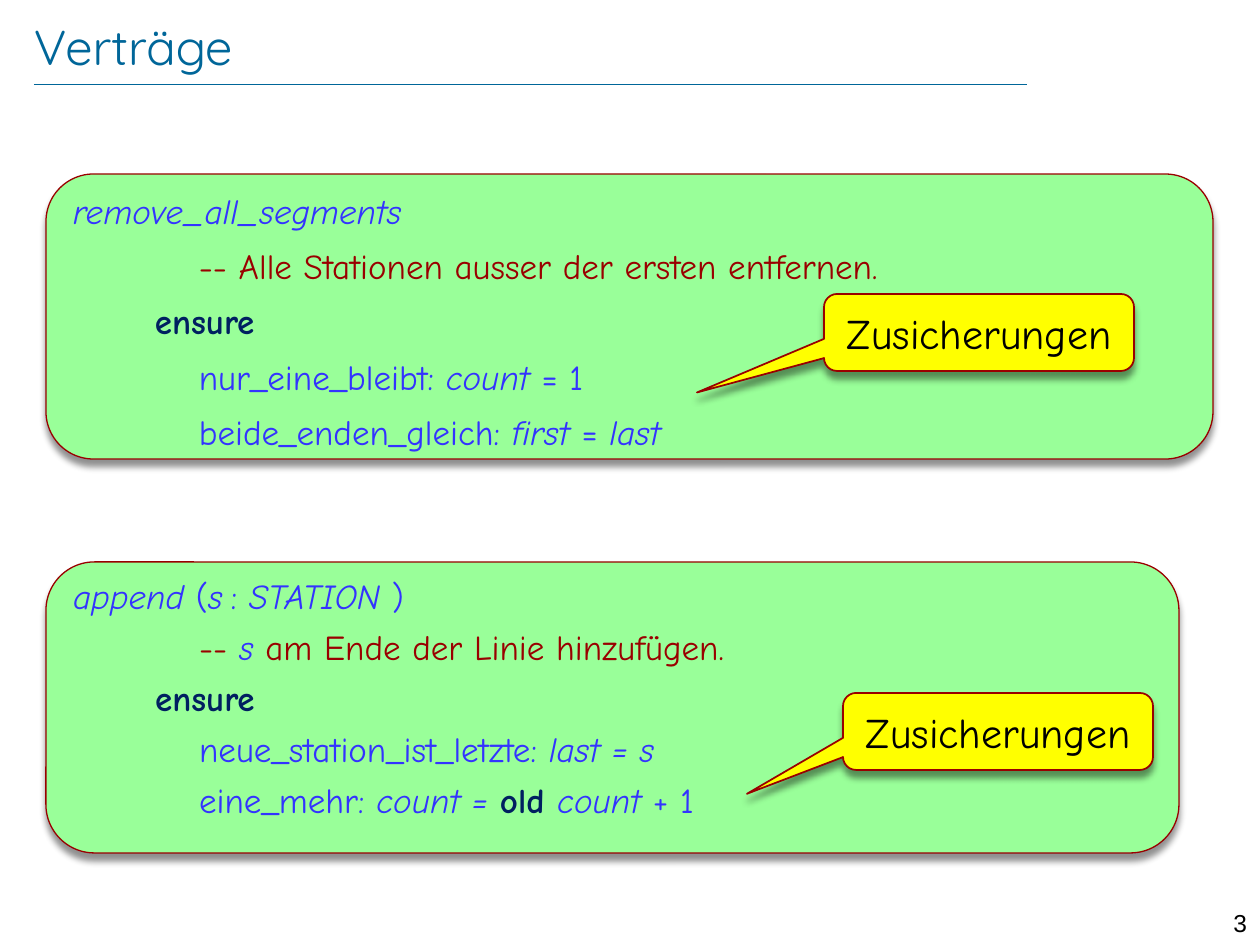
from typing import NamedTuple

import lxml.etree
import pptx
import pptx.dml.color
import pptx.enum.shapes
import pptx.enum.text
import pptx.oxml.ns
import pptx.util

SCALE = 914400 / 126  # EMU per px
SHAPES = pptx.enum.shapes.MSO_SHAPE
ALIGN = pptx.enum.text.PP_ALIGN
ANCHOR = pptx.enum.text.MSO_ANCHOR

BLUE, RED, NAVY, TEAL, BLACK = "3333FF", "990000", "002060", "006699", "000000"
GREEN, YELLOW = "99FF99", "FFFF00"
KEY_DENT, BODY_DENT = 82, 126


class Style(NamedTuple):
    color: str
    size: int = 20
    italic: bool = False
    bold: bool = False
    font: str = "Comic Neue"


CODE = Style(BLUE)
VAR = Style(BLUE, italic=True)
GAP = Style(BLUE, size=14)
NOTE = Style(RED)
KEY = Style(NAVY, bold=True)
LABEL = Style(BLACK, size=24)
TITLE = Style(TEAL, size=28, font="Quicksand")
NUMBER = Style(BLACK, size=14, font="Arial")


class Line(NamedTuple):
    indent: int
    runs: list[tuple[str, Style]]


class Panel(NamedTuple):
    box: tuple[int, int, int, int]
    spacing: float
    lines: list[Line]


class Callout(NamedTuple):
    box: tuple[int, int, int, int]
    tip: tuple[float, float]


ENSURE = Line(KEY_DENT, [("ensure", KEY)])

PANELS = [
    Panel((46, 174, 1167, 285), 0.9, [
        Line(0, [("remove_all_segments", VAR)]),
        Line(BODY_DENT, [("-- Alle Stationen ausser der ersten entfernen.", NOTE)]),
        ENSURE,
        Line(BODY_DENT, [("nur_eine_bleibt: ", CODE), ("count ", VAR), ("= 1", CODE)]),
        Line(BODY_DENT, [("beide_enden_gleich: ", CODE), ("first", VAR),
                         (" = ", CODE), ("last", VAR)]),
    ]),
    Panel((46, 562, 1133, 291), 0.8, [
        Line(0, [("append ", VAR), ("(", CODE), ("s", VAR), (" ", GAP),
                 (":", CODE), (" STATION ", VAR), (")", CODE)]),
        Line(BODY_DENT, [("-- ", NOTE), ("s", VAR),
                         (" am Ende der Linie hinzufügen.", NOTE)]),
        ENSURE,
        Line(BODY_DENT, [("neue_station_ist_letzte:", CODE), (" last = s", VAR)]),
        Line(BODY_DENT, [("eine_mehr: ", CODE), ("count = ", VAR), ("old ", KEY),
                         ("count ", VAR), ("+ 1", CODE)]),
    ]),
]

CALLOUTS = [
    Callout((824, 294, 310, 77), (-0.91, 0.78)),
    Callout((843, 693, 310, 77), (-0.81, 0.81)),
]


def px(*values: int) -> list[int]:
    return [round(value * SCALE) for value in values]


def rgb(code: str) -> pptx.dml.color.RGBColor:
    return pptx.dml.color.RGBColor.from_string(code)


def add_run(para, text: str, style: Style) -> None:
    run = para.add_run()
    run.text = text
    font = run.font
    font.name, font.size = style.font, pptx.util.Pt(style.size)
    font.italic, font.bold = style.italic, style.bold
    font.color.rgb = rgb(style.color)


def set_frame(frame, anchor, side: int, edge: int) -> None:
    """Set wrapping, anchor, and side and top/bottom margins in px."""
    frame.word_wrap = True
    frame.auto_size = pptx.enum.text.MSO_AUTO_SIZE.NONE
    frame.vertical_anchor = anchor
    frame.margin_left = frame.margin_right = px(side)[0]
    frame.margin_top = frame.margin_bottom = px(edge)[0]


def add_shadow(shape) -> None:
    shape.shadow.inherit = False
    effects = shape._element.spPr.find(pptx.oxml.ns.qn("a:effectLst"))
    points = str(pptx.util.Pt(4))
    outer = lxml.etree.SubElement(
        effects, pptx.oxml.ns.qn("a:outerShdw"),
        blurRad=points, dist=points, dir="5400000", rotWithShape="0")
    color = lxml.etree.SubElement(outer, pptx.oxml.ns.qn("a:srgbClr"), val=BLACK)
    lxml.etree.SubElement(color, pptx.oxml.ns.qn("a:alpha"), val="43000")


def add_box(slide, kind, box: tuple[int, int, int, int], fill: str, width: float):
    shape = slide.shapes.add_shape(kind, *px(*box))
    shape.fill.solid()
    shape.fill.fore_color.rgb = rgb(fill)
    shape.line.color.rgb = rgb(RED)
    shape.line.width = pptx.util.Pt(width)
    add_shadow(shape)
    return shape


def add_panel(slide, panel: Panel) -> None:
    shape = add_box(slide, SHAPES.ROUNDED_RECTANGLE, panel.box, GREEN, 0.75)
    frame = shape.text_frame
    set_frame(frame, ANCHOR.TOP, 13, 6)
    for index, line in enumerate(panel.lines):
        para = frame.add_paragraph() if index else frame.paragraphs[0]
        para.alignment = ALIGN.LEFT
        para.line_spacing = panel.spacing
        para.space_before = pptx.util.Pt(10 if index else 0)
        para._p.get_or_add_pPr().set("marL", str(px(line.indent)[0]))
        for text, style in line.runs:
            add_run(para, text, style)


def add_callout(slide, callout: Callout) -> None:
    shape = add_box(slide, SHAPES.ROUNDED_RECTANGULAR_CALLOUT, callout.box, YELLOW, 1)
    for index, value in enumerate((*callout.tip, 0.17)):
        shape.adjustments[index] = value
    set_frame(shape.text_frame, ANCHOR.MIDDLE, 0, 6)
    para = shape.text_frame.paragraphs[0]
    para.alignment = ALIGN.CENTER
    add_run(para, "Zusicherungen", LABEL)


def add_title(slide) -> None:
    title = slide.shapes.title
    title.left, title.top, title.width, title.height = px(34, 16, 1095, 60)
    set_frame(title.text_frame, ANCHOR.MIDDLE, 0, 0)
    para = title.text_frame.paragraphs[0]
    para.alignment = ALIGN.LEFT
    add_run(para, "Verträge", TITLE)


def add_rule(slide) -> None:
    rule = slide.shapes.add_connector(
        pptx.enum.shapes.MSO_CONNECTOR.STRAIGHT, *px(34, 84, 1027, 84))
    rule.line.color.rgb = rgb(TEAL)
    rule.line.width = pptx.util.Pt(0.25)
    lxml.etree.SubElement(rule._element.spPr, pptx.oxml.ns.qn("a:effectLst"))


def add_number(slide) -> None:
    frame = slide.shapes.add_textbox(*px(1191, 902, 69, 30)).text_frame
    set_frame(frame, ANCHOR.TOP, 13, 6)
    para = frame.paragraphs[0]
    para.alignment = ALIGN.RIGHT
    add_run(para, "3", NUMBER)


def main() -> None:
    deck = pptx.Presentation()
    deck.slide_width, deck.slide_height = px(1260, 945)
    slide = deck.slides.add_slide(deck.slide_layouts[5])
    add_title(slide)
    add_rule(slide)
    add_number(slide)
    for panel in PANELS:
        add_panel(slide, panel)
    for callout in CALLOUTS:
        add_callout(slide, callout)
    deck.save("out.pptx")


if __name__ == "__main__":
    main()
